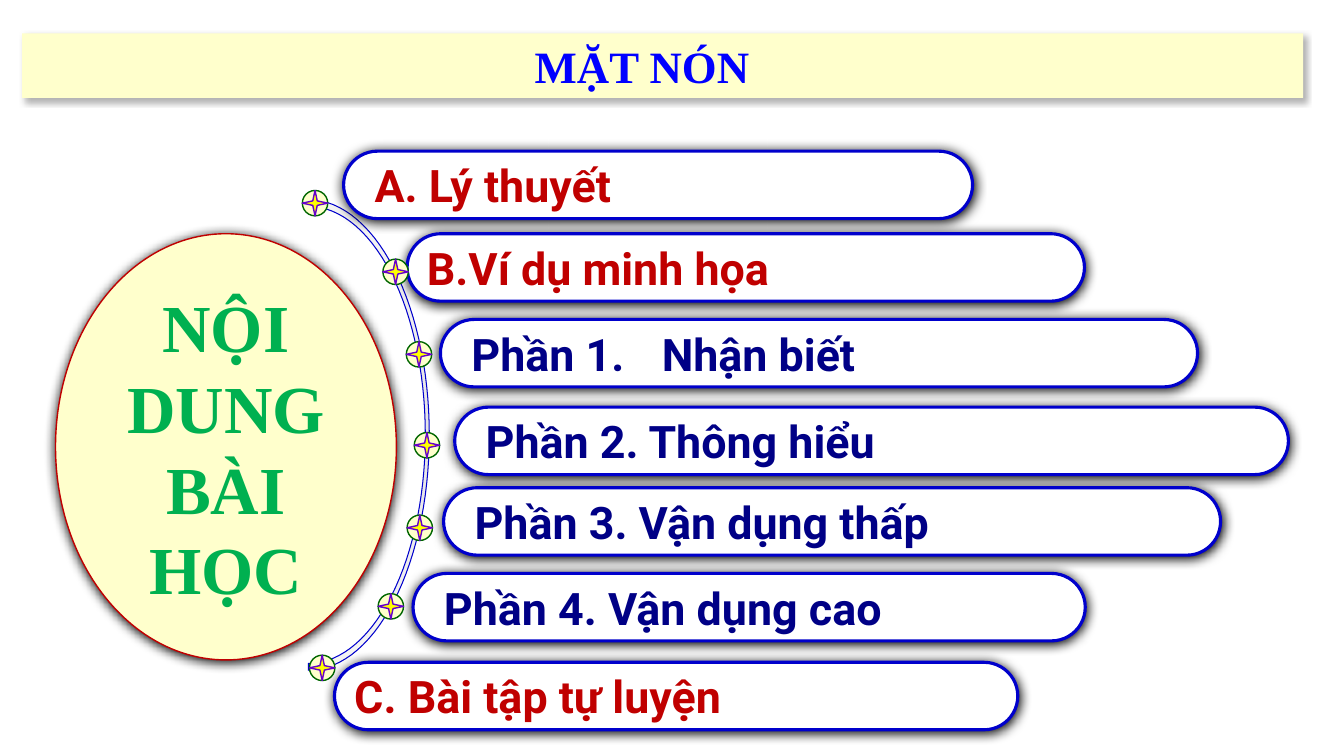
from copy import deepcopy
from dataclasses import dataclass
from math import cos, pi, sin
from typing import NamedTuple

from lxml.etree import SubElement
from pptx import Presentation
from pptx.dml.color import RGBColor
from pptx.enum.shapes import MSO_SHAPE
from pptx.enum.text import MSO_ANCHOR, PP_ALIGN
from pptx.oxml.ns import qn
from pptx.util import Cm, Pt


class Shade(NamedTuple):
    alpha: int
    blur: float
    dist: float
    angle: int


@dataclass(frozen=True)
class Theme:
    cream: str = "FFFFCC"
    white: str = "FFFFFF"
    edge: str = "0000CC"
    red: str = "C00000"
    navy: str = "000086"
    green: str = "00B050"
    blue: str = "0000FF"
    ring: str = "006600"
    star: str = "FFFF00"
    violet: str = "6600CC"
    pale: str = "F4F4F4"
    grey: str = "E7E6E6"
    serif: str = "Times New Roman"
    sans: str = "Roboto"
    large: int = 48
    normal: int = 32
    soft: Shade = Shade(30, 4.5, 2.6, 53)
    deep: Shade = Shade(100, 8.5, 1, 90)


class Box(NamedTuple):
    left: float
    top: float
    width: float
    height: float


class Topic(NamedTuple):
    """One outline bar with the place of its marker on the arc."""
    text: str
    color: str
    left: float
    top: float
    width: float
    dot_x: float
    dot_y: float


THEME = Theme()
BAR_HEIGHT = 1.7
DOT_SIZE = 0.64
TOPICS = [
    Topic(" A. Lý thuyết", THEME.red, 8.66, 3.81, 15.85, 7.62, 4.8),
    Topic("B.Ví dụ minh họa", THEME.red, 10.26, 5.89, 17.07, 9.65, 6.53),
    Topic(" Phần 1. \tNhận biết", THEME.navy, 11.1, 8.05, 19.08, 10.24, 8.61),
    Topic(" Phần 2. Thông hiểu", THEME.navy, 11.46, 10.26, 21.01, 10.44, 10.9),
    Topic(" Phần 3. Vận dụng thấp", THEME.navy, 11.18, 12.29, 19.58, 10.26, 12.98),
    Topic(" Phần 4. Vận dụng cao", THEME.navy, 10.41, 14.45, 16.94, 9.53, 14.96),
    Topic("C. Bài tập tự luyện", THEME.red, 8.43, 16.69, 17.22, 7.8, 16.51),
]


def rgb(code: str) -> RGBColor:
    return RGBColor.from_string(code)


def add_shade(shape, shade: Shade) -> None:
    effects = shape._element.spPr.find(qn("a:effectLst"))
    outer = SubElement(effects, qn("a:outerShdw"), blurRad=str(Pt(shade.blur)),
                       dist=str(Pt(shade.dist)), dir=str(shade.angle * 60000),
                       algn="ctr", rotWithShape="0")
    color = SubElement(outer, qn("a:srgbClr"), val="000000")
    SubElement(color, qn("a:alpha"), val=str(shade.alpha * 1000))


def set_line(shape, color: str, width: float) -> None:
    shape.line.color.rgb = rgb(color)
    shape.line.width = Pt(width)


def add_form(shapes, kind: MSO_SHAPE, box: Box, fill: str,
             edge: str = "", width: float = 1, shade: Shade | None = None):
    shape = shapes.add_shape(kind, *map(Cm, box))
    shape.shadow.inherit = False
    shape.fill.solid()
    shape.fill.fore_color.rgb = rgb(fill)
    if edge:
        set_line(shape, edge, width)
    else:
        shape.line.fill.background()
    if shade:
        add_shade(shape, shade)
    return shape


def add_text(shape, text: str, font: str, size: int, color: str,
             align: PP_ALIGN, wrap: bool = True) -> None:
    frame = shape.text_frame
    frame.word_wrap = wrap
    para = frame.paragraphs[0]
    para.alignment = align
    run = para.add_run()
    run.text = text
    run.font.name = font
    run.font.size = Pt(size)
    run.font.bold = True
    run.font.color.rgb = rgb(color)


def add_arc(shapes) -> None:
    """Draw the thin crescent band as two half ellipses joined at the ends."""
    mid_x, mid_y, steps = 7.77, 10.96, 60

    def trace(rx: float, ry: float) -> list[tuple[int, int]]:
        turns = [pi * i / steps - pi / 2 for i in range(steps + 1)]
        return [(Cm(mid_x + rx * cos(t)), Cm(mid_y + ry * sin(t))) for t in turns]

    points = trace(2.95, 5.76) + trace(3.05, 5.93)[::-1]
    path = shapes.build_freeform(*points[0])
    path.add_line_segments(points[1:], close=True)
    band = path.convert_to_shape()
    band.shadow.inherit = False
    band.fill.gradient()
    band.fill.gradient_angle = 90
    stops = band._element.spPr.find(qn("a:gradFill")).find(qn("a:gsLst"))
    stops.append(deepcopy(stops[-1]))
    tones = [(0, THEME.pale), (0.5, THEME.grey), (1, THEME.pale)]
    for stop, (place, tone) in zip(band.fill.gradient_stops, tones):
        stop.position = place
        stop.color.rgb = rgb(tone)
    set_line(band, THEME.edge, 0.75)


def add_bar(shapes, topic: Topic) -> None:
    box = Box(topic.left, topic.top, topic.width, BAR_HEIGHT)
    bar = add_form(shapes, MSO_SHAPE.ROUNDED_RECTANGLE, box, THEME.white,
                   THEME.edge, 2.25, THEME.deep)
    bar.adjustments[0] = 0.5
    add_text(bar, topic.text, THEME.sans, THEME.normal, topic.color,
             PP_ALIGN.LEFT, wrap=False)


def add_dot(shapes, topic: Topic) -> None:
    group = shapes.add_group_shape().shapes
    box = Box(topic.dot_x, topic.dot_y, DOT_SIZE, DOT_SIZE)
    add_form(group, MSO_SHAPE.OVAL, box, THEME.cream, THEME.ring)
    add_form(group, MSO_SHAPE.STAR_4_POINT, box, THEME.star, THEME.violet)


def main() -> None:
    deck = Presentation()
    deck.slide_width, deck.slide_height = Cm(33.87), Cm(19.05)
    shapes = deck.slides.add_slide(deck.slide_layouts[6]).shapes

    add_form(shapes, MSO_SHAPE.RECTANGLE, Box(0.56, 0.84, 32.28, 1.63),
             THEME.cream, shade=THEME.soft)
    add_arc(shapes)
    for topic in TOPICS:
        add_bar(shapes, topic)
    for topic in TOPICS:
        add_dot(shapes, topic)

    oval = add_form(shapes, MSO_SHAPE.OVAL, Box(1.4, 5.89, 8.59, 10.74),
                    THEME.cream, THEME.red, shade=THEME.deep)
    add_text(oval, "NỘI DUNG BÀI HỌC", THEME.serif, THEME.large, THEME.green,
             PP_ALIGN.CENTER)
    title = shapes.add_textbox(*map(Cm, Box(0.84, 0.86, 30.68, 1.63)))
    title.text_frame.vertical_anchor = MSO_ANCHOR.TOP
    add_text(title, "MẶT NÓN", THEME.serif, THEME.normal, THEME.blue,
             PP_ALIGN.CENTER)
    deck.save("out.pptx")


if __name__ == "__main__":
    main()
